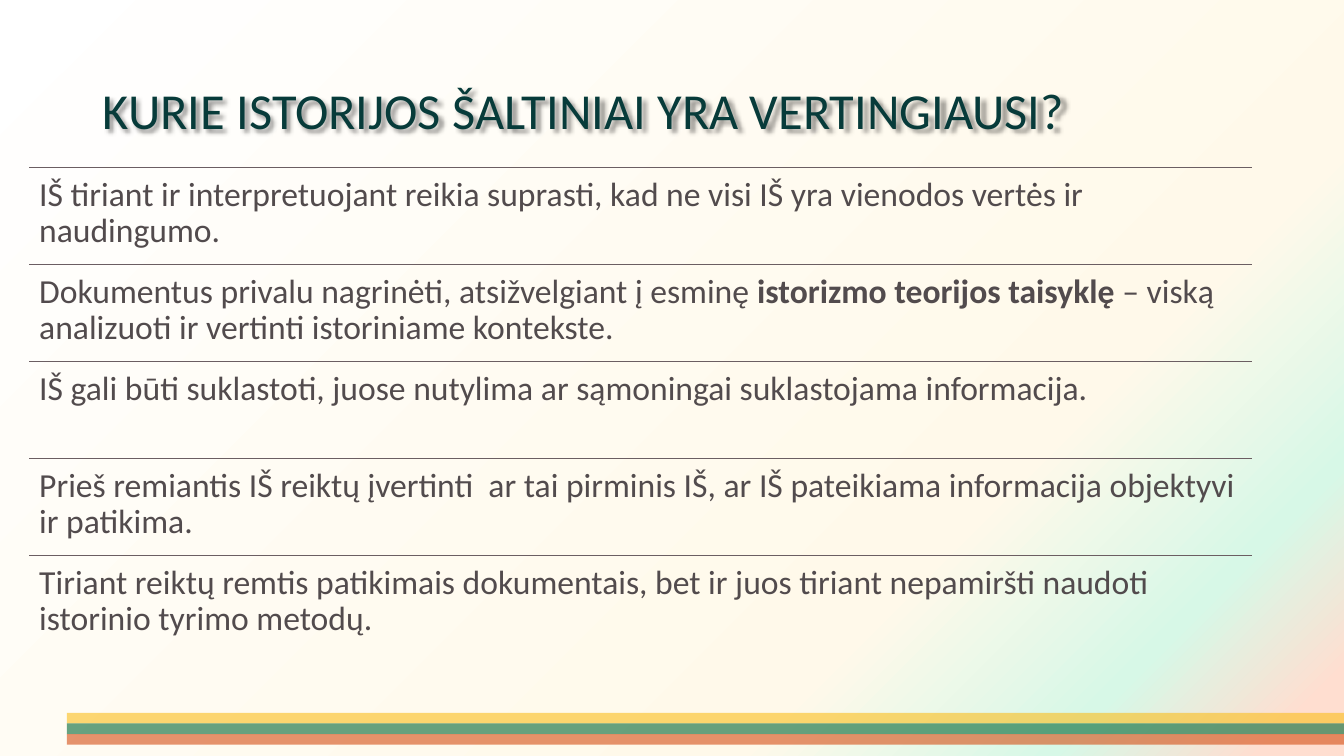
import lxml.etree
import pptx
import pptx.dml.color
import pptx.enum.shapes
import pptx.enum.text
import pptx.oxml
import pptx.oxml.ns
import pptx.util

RGB = pptx.dml.color.RGBColor
TITLE_GREEN = RGB(0x07, 0x3B, 0x3A)
TEXT_GREY = RGB(0x52, 0x4B, 0x4D)
RULE_GREY = RGB(0x6B, 0x5E, 0x62)
YELLOW = RGB(0xFB, 0xBD, 0x1A)
GREEN = RGB(0x00, 0x66, 0x33)
ORANGE = RGB(0xD5, 0x4D, 0x13)
BACKGROUND_STOPS = [
    (0, RGB(0xFF, 0xFF, 0xFF)),
    (71, RGB(0xFF, 0xF9, 0xEA)),
    (86, RGB(0xD7, 0xF8, 0xE7)),
    (96, RGB(0xFF, 0xDE, 0xD0)),
]

TITLE = "KURIE ISTORIJOS ŠALTINIAI YRA VERTINGIAUSI?"
STATEMENTS = [
    ["IŠ tiriant ir interpretuojant reikia suprasti, kad ne visi IŠ yra vienodos vertės ir naudingumo."],
    ["Dokumentus privalu nagrinėti, atsižvelgiant į esminę ",
     "istorizmo teorijos taisyklę ",
     "– viską analizuoti ir vertinti istoriniame kontekste."],
    ["IŠ gali būti suklastoti, juose nutylima ar sąmoningai suklastojama informacija."],
    ["Prieš remiantis IŠ reiktų įvertinti  ar tai pirminis IŠ, ar IŠ pateikiama informacija objektyvi ir patikima."],
    ["Tiriant reiktų remtis patikimais dokumentais, bet ir juos tiriant nepamiršti naudoti istorinio tyrimo metodų."],
]


def qn(tag):
    return pptx.oxml.ns.qn(tag)


def parse_a(xml):
    """Build an element from XML whose root carries a {ns} mark for the drawing namespace."""
    return pptx.oxml.parse_xml(xml.replace("{ns}", pptx.oxml.ns.nsdecls("a")))


def write(p, text, *, size, color, bold=False, font="Calibri"):
    r = p.add_run()
    r.text = text
    r.font.name = font
    r.font.size = pptx.util.Pt(size)
    r.font.bold = bold
    r.font.color.rgb = color


class Deck:
    """Holds the current slide; all lengths are percentages of the slide's size."""

    def __init__(self, width, height):
        self.prs = pptx.Presentation()
        self.prs.slide_width = pptx.util.Inches(width)
        self.prs.slide_height = pptx.util.Inches(height)
        self.s = self.prs.slides.add_slide(self.prs.slide_layouts[5])

    def box(self, x, y, w, h):
        sw, sh = self.prs.slide_width, self.prs.slide_height
        return [round(v * side / 100) for v, side in ((x, sw), (y, sh), (w, sw), (h, sh))]

    def background(self, stops):
        """Fill the slide with a circular gradient that spreads from the top left."""
        self.s.background.fill.solid()
        solid = next(self.s.element.iter(qn("a:solidFill")))
        marks = "".join(f'<a:gs pos="{pos * 1000}"><a:srgbClr val="{color}"/></a:gs>'
                        for pos, color in stops)
        solid.getparent().replace(solid, parse_a(
            f'<a:gradFill {{ns}} rotWithShape="1"><a:gsLst>{marks}</a:gsLst>'
            '<a:path path="circle"><a:fillToRect r="100000" b="100000"/></a:path></a:gradFill>'))

    def title(self, text, *area):
        sp = self.s.shapes.title
        sp.left, sp.top, sp.width, sp.height = self.box(*area)
        sp.shadow.inherit = False
        sp.element.spPr.find(qn("a:effectLst")).append(parse_a(
            '<a:outerShdw {ns} blurRad="38100" dist="38100" dir="2700000" algn="tl">'
            '<a:srgbClr val="000000"><a:alpha val="43000"/></a:srgbClr></a:outerShdw>'))
        tf = sp.text_frame
        tf.auto_size = pptx.enum.text.MSO_AUTO_SIZE.NONE
        tf.vertical_anchor = pptx.enum.text.MSO_ANCHOR.MIDDLE
        p = tf.paragraphs[0]
        p.alignment = pptx.enum.text.PP_ALIGN.LEFT
        p.line_spacing = 0.9
        write(p, text, size=36, color=TITLE_GREEN)

    def bar(self, color, opacity, *area):
        sp = self.s.shapes.add_shape(pptx.enum.shapes.MSO_SHAPE.RECTANGLE, *self.box(*area))
        sp.shadow.inherit = False
        sp.line.fill.background()
        sp.fill.solid()
        sp.fill.fore_color.rgb = color
        mark = next(sp.element.spPr.iter(qn("a:srgbClr")))
        lxml.etree.SubElement(mark, qn("a:alpha"), val=str(opacity * 1000))

    def rule(self, x, y, w):
        left, top, width, _ = self.box(x, y, w, 0)
        line = self.s.shapes.add_connector(
            pptx.enum.shapes.MSO_CONNECTOR.STRAIGHT, left, top, left + width, top)
        line.line.color.rgb = RULE_GREY
        line.line.width = pptx.util.Pt(1)
        lxml.etree.SubElement(line.element.spPr, qn("a:effectLst"))

    def statement(self, parts, *area):
        """Write one paragraph in which every second part is bold."""
        tf = self.s.shapes.add_textbox(*self.box(*area)).text_frame
        tf.word_wrap = True
        tf.margin_left = tf.margin_right = pptx.util.Inches(0.1)
        tf.margin_top = tf.margin_bottom = pptx.util.Inches(0.1)
        p = tf.paragraphs[0]
        p.alignment = pptx.enum.text.PP_ALIGN.LEFT
        p.line_spacing = 0.9
        for i, text in enumerate(parts):
            write(p, text, size=24, color=TEXT_GREY, bold=i % 2 == 1)


def main():
    deck = Deck(13.33, 7.5)
    deck.background(BACKGROUND_STOPS)

    bar_left, bar_top, bar_height = 4.98, 94.3, 1.4
    for i, color in enumerate((YELLOW, GREEN, ORANGE)):
        deck.bar(color, 60, bar_left, bar_top + i * bar_height, 100 - bar_left, bar_height)

    deck.title(TITLE, 6.9, 5.33, 86.25, 19.33)

    left, top, width, row_height = 2.18, 22.13, 91, 12.84
    for i, parts in enumerate(STATEMENTS):
        y = top + i * row_height
        deck.rule(left, y, width)
        deck.statement(parts, left, y, width, row_height)

    deck.prs.save("out.pptx")


if __name__ == "__main__":
    main()
